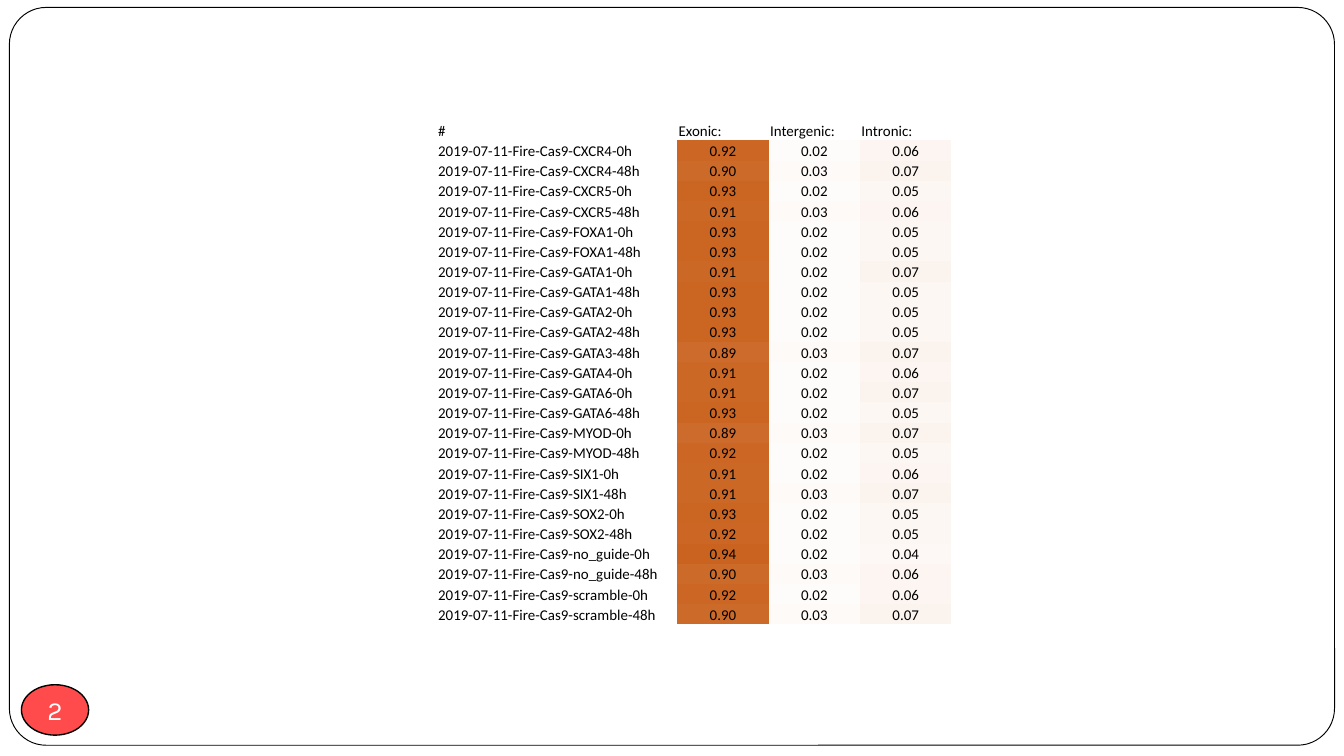
from typing import NamedTuple

from pptx import Presentation
from pptx import util as u
from pptx.dml.color import RGBColor
from pptx.enum import shapes, text
from pptx.oxml.ns import qn

PX = 4572
NO_STYLE_NO_GRID = "{2D5ABB26-0587-4C30-8999-92F81FD0307C}"
HEAT_LOW, HEAT_HIGH = "FFFFFF", "C65911"
HEADERS = ["#", "Exonic:", "Intergenic:", "Intronic:"]
COL_WIDTHS = [358, 136, 136, 136]
ROW_HEIGHT = 30


class Box(NamedTuple):
    left: int
    top: int
    width: int
    height: int


class Sample(NamedTuple):
    name: str
    exonic: float
    intergenic: float
    intronic: float


SAMPLES = [
    Sample("CXCR4-0h", 0.92, 0.02, 0.06),
    Sample("CXCR4-48h", 0.90, 0.03, 0.07),
    Sample("CXCR5-0h", 0.93, 0.02, 0.05),
    Sample("CXCR5-48h", 0.91, 0.03, 0.06),
    Sample("FOXA1-0h", 0.93, 0.02, 0.05),
    Sample("FOXA1-48h", 0.93, 0.02, 0.05),
    Sample("GATA1-0h", 0.91, 0.02, 0.07),
    Sample("GATA1-48h", 0.93, 0.02, 0.05),
    Sample("GATA2-0h", 0.93, 0.02, 0.05),
    Sample("GATA2-48h", 0.93, 0.02, 0.05),
    Sample("GATA3-48h", 0.89, 0.03, 0.07),
    Sample("GATA4-0h", 0.91, 0.02, 0.06),
    Sample("GATA6-0h", 0.91, 0.02, 0.07),
    Sample("GATA6-48h", 0.93, 0.02, 0.05),
    Sample("MYOD-0h", 0.89, 0.03, 0.07),
    Sample("MYOD-48h", 0.92, 0.02, 0.05),
    Sample("SIX1-0h", 0.91, 0.02, 0.06),
    Sample("SIX1-48h", 0.91, 0.03, 0.07),
    Sample("SOX2-0h", 0.93, 0.02, 0.05),
    Sample("SOX2-48h", 0.92, 0.02, 0.05),
    Sample("no_guide-0h", 0.94, 0.02, 0.04),
    Sample("no_guide-48h", 0.90, 0.03, 0.06),
    Sample("scramble-0h", 0.92, 0.02, 0.06),
    Sample("scramble-48h", 0.90, 0.03, 0.07),
]


def px(n: int) -> u.Emu:
    return u.Emu(n * PX)


def color(hex_color: str) -> RGBColor:
    return RGBColor.from_string(hex_color)


def heat(share: float) -> str:
    pairs = zip(color(HEAT_LOW), color(HEAT_HIGH))
    return "".join(f"{round(lo + (hi - lo) * share):02X}" for lo, hi in pairs)


def style_font(p, name: str, size: int, hex_color: str) -> None:
    for r in p.runs:
        r.font.name = name
        r.font.size = u.Pt(size)
        r.font.color.rgb = color(hex_color)


def add_shape(s, kind, box: Box, fill: str, line_width: float):
    sp = s.shapes.add_shape(kind, *map(px, box))
    sp.shadow.inherit = False
    sp.fill.solid()
    sp.fill.fore_color.rgb = color(fill)
    sp.line.color.rgb = color("000000")
    sp.line.width = u.Pt(line_width)
    return sp


def add_page_number(s, box: Box, number: str) -> None:
    sp = add_shape(s, shapes.MSO_SHAPE.OVAL, box, "FF4B4B", 0.75)
    tf = sp.text_frame
    tf.text = number
    tf.word_wrap = False
    tf.vertical_anchor = text.MSO_ANCHOR.MIDDLE
    tf.margin_left = tf.margin_right = tf.margin_top = tf.margin_bottom = 0
    p = tf.paragraphs[0]
    p.alignment = text.PP_ALIGN.CENTER
    style_font(p, "Karla", 14, "FFFFFF")


def fill_cell(cell, label: str, share: float | None = None) -> None:
    cell.margin_left = cell.margin_right = cell.margin_top = px(2)
    cell.margin_bottom = 0
    cell.vertical_anchor = text.MSO_ANCHOR.BOTTOM
    cell.text_frame.text = label
    p = cell.text_frame.paragraphs[0]
    style_font(p, "Calibri", 8, "000000")
    if share is None:
        cell.fill.background()
    else:
        p.alignment = text.PP_ALIGN.CENTER
        cell.fill.solid()
        cell.fill.fore_color.rgb = color(heat(share))


def add_heat_table(s, left: int, top: int, samples: list[Sample]) -> None:
    n_rows = len(samples) + 1
    box = Box(left, top, sum(COL_WIDTHS), n_rows * ROW_HEIGHT)
    table = s.shapes.add_table(n_rows, len(HEADERS), *map(px, box)).table
    table.first_row = table.horz_banding = False
    table._tbl.tblPr.find(qn("a:tableStyleId")).text = NO_STYLE_NO_GRID
    for col, width in zip(table.columns, COL_WIDTHS):
        col.width = px(width)
    for row in table.rows:
        row.height = px(ROW_HEIGHT)
    for j, header in enumerate(HEADERS):
        fill_cell(table.cell(0, j), header)
    for i, (name, *shares) in enumerate(samples, 1):
        fill_cell(table.cell(i, 0), f"2019-07-11-Fire-Cas9-{name}")
        for j, share in enumerate(shares, 1):
            fill_cell(table.cell(i, j), f"{share:.2f}", share)


def main() -> None:
    prs = Presentation()
    prs.slide_width, prs.slide_height = px(2000), px(1125)
    s = prs.slides.add_slide(prs.slide_layouts[6])
    frame = add_shape(s, shapes.MSO_SHAPE.ROUNDED_RECTANGLE,
                      Box(14, 11, 1972, 1098), "FFFFFF", 0.5)
    frame.adjustments[0] = 0.05
    add_page_number(s, Box(32, 1019, 100, 75), "2")
    add_heat_table(s, 650, 179, SAMPLES)
    prs.save("out.pptx")


if __name__ == "__main__":
    main()
